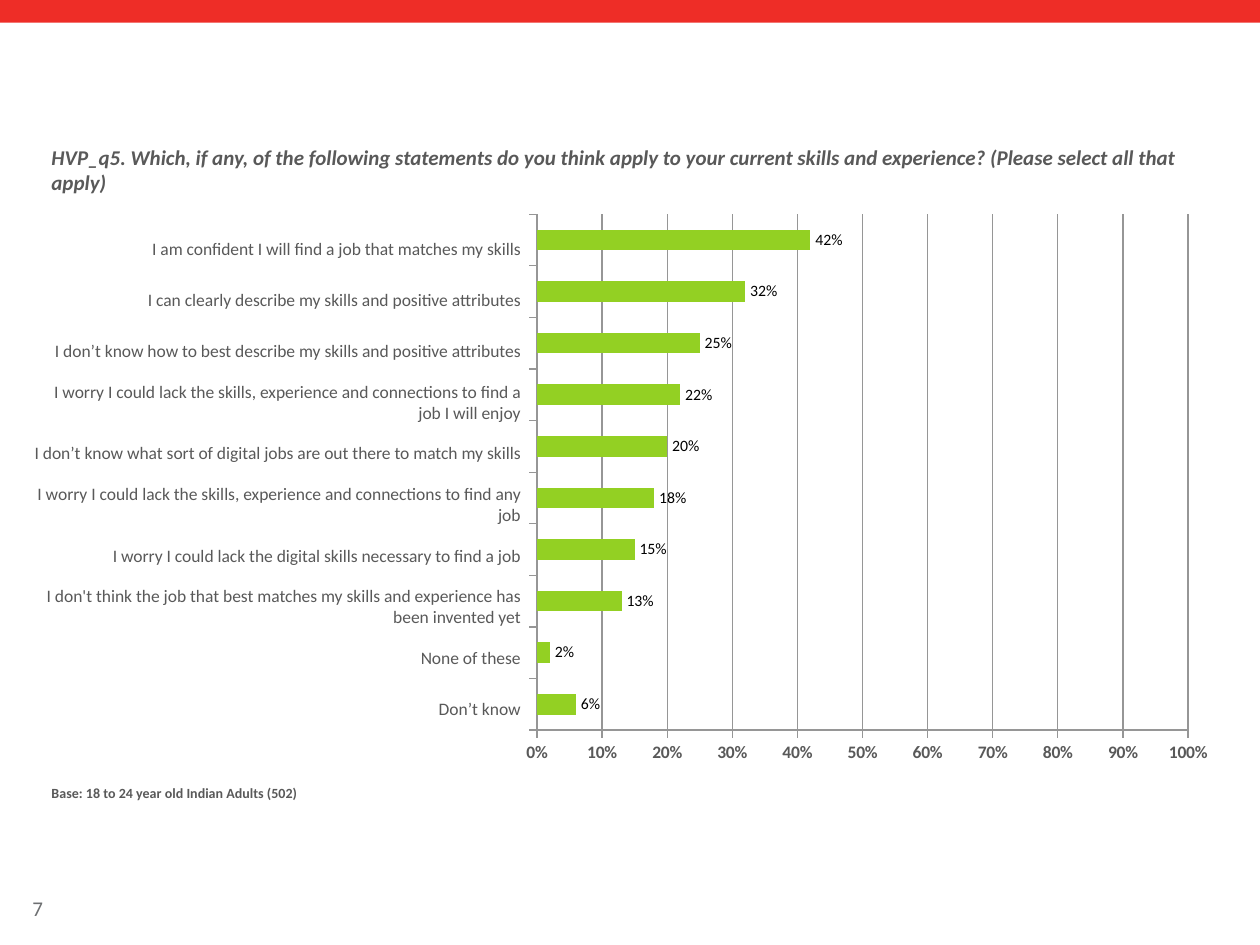
from dataclasses import dataclass, field
from typing import Any

from lxml import etree
from pptx import Presentation
from pptx.chart.chart import Chart
from pptx.chart.data import CategoryChartData
from pptx.dml.color import RGBColor
from pptx.enum.chart import XL_CHART_TYPE, XL_LABEL_POSITION, XL_TICK_LABEL_POSITION, XL_TICK_MARK
from pptx.enum.shapes import MSO_SHAPE
from pptx.enum.text import MSO_ANCHOR, MSO_AUTO_SIZE, PP_ALIGN
from pptx.oxml import parse_xml
from pptx.oxml.ns import nsdecls, qn
from pptx.slide import Slide
from pptx.util import Inches, Pt

BAR_CLUSTERED = XL_CHART_TYPE.BAR_CLUSTERED
OUTSIDE_END = XL_LABEL_POSITION.OUTSIDE_END
NO_LABELS = XL_TICK_LABEL_POSITION.NONE
LOW = XL_TICK_LABEL_POSITION.LOW
TICK_OUTSIDE = XL_TICK_MARK.OUTSIDE
TICK_NONE = XL_TICK_MARK.NONE
RECTANGLE = MSO_SHAPE.RECTANGLE
MIDDLE = MSO_ANCHOR.MIDDLE
GROW = MSO_AUTO_SIZE.SHAPE_TO_FIT_TEXT
RIGHT = PP_ALIGN.RIGHT

RED, GREEN, BLACK = "EE2D27", "93D023", "000000"
TEXT_GREY, PAGE_GREY, LINE_GREY = "595959", "6D6F71", "969696"
BODY_FONT, CHART_FONT = "Calibri", "Manrope"

LABEL_TOP, LABEL_STEP = 1.77, 0.405
PLOT_LAYOUT = {"x": 0.034, "y": 0.02, "w": 0.918, "h": 0.904}


@dataclass(frozen=True)
class Statement:
    """An answer and the share of respondents who chose it."""
    wording: str
    share: float


@dataclass(frozen=True)
class Caption:
    """A text block with its place and format."""
    wording: str
    left: float
    top: float
    width: float
    height: float
    size: float
    color: str = TEXT_GREY
    emphasis: dict[str, bool] = field(default_factory=dict)
    frame: dict[str, Any] = field(default_factory=dict)
    paragraph: dict[str, Any] = field(default_factory=dict)


STATEMENTS = [
    Statement("I am confident I will find a job that matches my skills", 0.42),
    Statement("I can clearly describe my skills and positive attributes", 0.32),
    Statement("I don’t know how to best describe my skills and positive attributes", 0.25),
    Statement("I worry I could lack the skills, experience and connections to find a job I will enjoy", 0.22),
    Statement("I don’t know what sort of digital jobs are out there to match my skills", 0.20),
    Statement("I worry I could lack the skills, experience and connections to find any job", 0.18),
    Statement("I worry I could lack the digital skills necessary to find a job", 0.15),
    Statement("I don't think the job that best matches my skills and experience has been invented yet", 0.13),
    Statement("None of these", 0.02),
    Statement("Don’t know", 0.06),
]

QUESTION = Caption(
    "HVP_q5. Which, if any, of the following statements do you think apply to your "
    "current skills and experience? (Please select all that apply)",
    0.31, 1.1, 9.39, 0.51, 12, emphasis={"bold": True, "italic": True},
)
BASE = Caption("Base: 18 to 24 year old Indian Adults (502)",
               0.31, 6.18, 9.39, 0.43, 8, emphasis={"bold": True})
PAGE_NUMBER = Caption("7", 0.16, 7.06, 0.77, 0.3, 12, PAGE_GREY,
                      frame={"vertical_anchor": MIDDLE, "auto_size": GROW})


def rgb(color: str) -> RGBColor:
    """Turn a hex string into a colour."""
    return RGBColor.from_string(color)


def set_format(target: Any, values: dict[str, Any]) -> None:
    """Set each named attribute on the target."""
    for name, value in values.items():
        setattr(target, name, value)


def style_font(font: Any, size: float, color: str, name: str = BODY_FONT, **emphasis: bool) -> None:
    """Give a font its face, size, colour and emphasis."""
    set_format(font, {"name": name, "size": Pt(size), **emphasis})
    font.color.rgb = rgb(color)


def add_caption(slide: Slide, caption: Caption) -> None:
    """Add one wrapped text block."""
    bounds = (caption.left, caption.top, caption.width, caption.height)
    frame = slide.shapes.add_textbox(*map(Inches, bounds)).text_frame
    set_format(frame, {"word_wrap": True, **caption.frame})
    paragraph = frame.paragraphs[0]
    set_format(paragraph, caption.paragraph)
    run = paragraph.add_run()
    run.text = caption.wording
    style_font(run.font, caption.size, caption.color, **caption.emphasis)


def add_banner(slide: Slide) -> None:
    """Add the red band along the top edge."""
    banner = slide.shapes.add_shape(RECTANGLE, 0, 0, Inches(10), Inches(0.18))
    banner.shadow.inherit = False
    banner.fill.solid()
    banner.fill.fore_color.rgb = rgb(RED)
    banner.line.fill.background()


def style_line(line: Any) -> None:
    """Give an axis or grid line its grey stroke."""
    line.width = Pt(0.75)
    line.color.rgb = rgb(LINE_GREY)


def place_plot(chart: Chart) -> None:
    """Fix the inner plot area so that bars line up with the statements."""
    plot_area = chart._chartSpace.find(f"{qn('c:chart')}/{qn('c:plotArea')}")
    for layout in plot_area.findall(qn("c:layout")):
        plot_area.remove(layout)
    layout = parse_xml(f"<c:layout {nsdecls('c')}><c:manualLayout/></c:layout>")
    settings = {"layoutTarget": "inner", "xMode": "edge", "yMode": "edge", **PLOT_LAYOUT}
    for name, value in settings.items():
        etree.SubElement(layout[0], qn(f"c:{name}")).set("val", str(value))
    plot_area.insert(0, layout)


def add_share_chart(slide: Slide) -> None:
    """Add the bar chart of shares, with the first statement at the top."""
    data = CategoryChartData(number_format="0%")
    data.categories = [str(number) for number in range(1, len(STATEMENTS) + 1)]
    data.add_series("Series 1", [statement.share for statement in reversed(STATEMENTS)])
    bounds = map(Inches, (4.07, 1.61, 5.63, 4.53))
    chart = slide.shapes.add_chart(BAR_CLUSTERED, *bounds, data).chart
    set_format(chart, {"has_legend": False, "has_title": False})
    style_font(chart.font, 18, PAGE_GREY, CHART_FONT)
    place_plot(chart)

    plot = chart.plots[0]
    set_format(plot, {"gap_width": 150, "overlap": -10, "vary_by_categories": False})
    bars = plot.series[0]
    bars.invert_if_negative = False
    bars.format.fill.solid()
    bars.format.fill.fore_color.rgb = rgb(GREEN)
    labels = bars.data_labels
    set_format(labels, {"show_value": True, "position": OUTSIDE_END,
                        "number_format": "0%", "number_format_is_linked": False})
    style_font(labels.font, 9, BLACK)

    ticks = {"major_tick_mark": TICK_OUTSIDE, "minor_tick_mark": TICK_NONE}
    set_format(chart.category_axis, {**ticks, "has_major_gridlines": False,
                                     "tick_label_position": NO_LABELS})
    set_format(chart.value_axis, {**ticks, "has_major_gridlines": True, "tick_label_position": LOW,
                                  "minimum_scale": 0, "maximum_scale": 1, "major_unit": 0.1})
    set_format(chart.value_axis.tick_labels, {"number_format": "0%", "number_format_is_linked": False})
    for axis, bold in ((chart.category_axis, False), (chart.value_axis, True)):
        style_font(axis.tick_labels.font, 10, TEXT_GREY, bold=bold)
        style_line(axis.format.line)
    style_line(chart.value_axis.major_gridlines.format.line)


def add_statements(slide: Slide) -> None:
    """Add the statements beside their bars."""
    for row, statement in enumerate(STATEMENTS):
        add_caption(slide, Caption(
            statement.wording, 0.16, LABEL_TOP + row * LABEL_STEP, 4.07, 0.41, 10,
            frame={"vertical_anchor": MIDDLE, "auto_size": GROW}, paragraph={"alignment": RIGHT},
        ))


def main() -> None:
    """Build the survey slide and save it."""
    deck = Presentation()
    set_format(deck, {"slide_width": Inches(10), "slide_height": Inches(7.5)})
    slide = deck.slides.add_slide(deck.slide_layouts[6])
    add_banner(slide)
    add_caption(slide, PAGE_NUMBER)
    add_caption(slide, QUESTION)
    add_share_chart(slide)
    add_statements(slide)
    add_caption(slide, BASE)
    deck.save("out.pptx")


if __name__ == "__main__":
    main()
